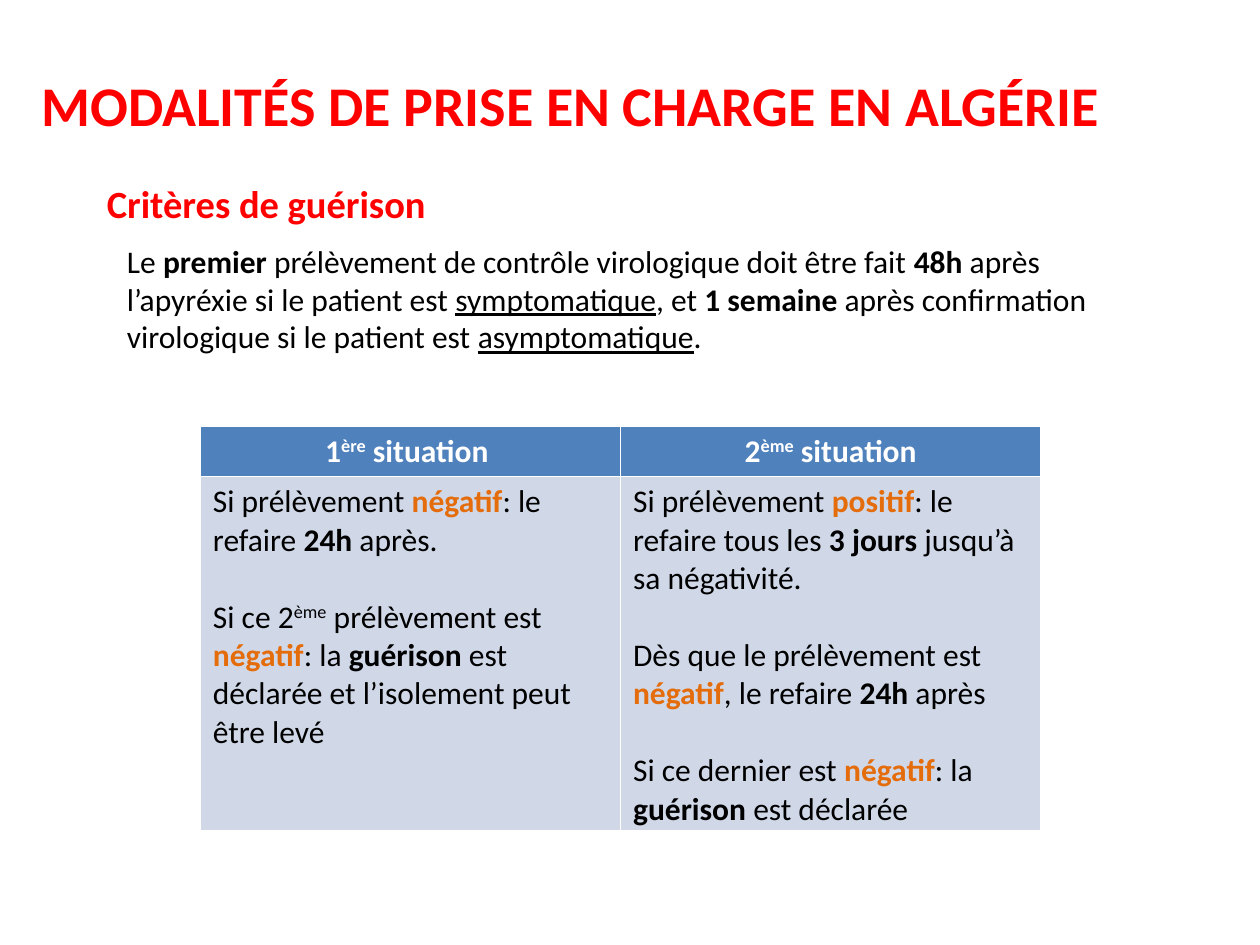
import pptx
import pptx.dml.color
import pptx.enum.text
import pptx.util

Inches, Pt = pptx.util.Inches, pptx.util.Pt
ALIGN = pptx.enum.text.PP_ALIGN
ANCHOR = pptx.enum.text.MSO_ANCHOR

COLORS = {
    "red": "FF0000",
    "black": "000000",
    "white": "FFFFFF",
    "orange": "E46C0A",
    "header": "4F81BD",
    "body": "D0D8E8",
}
STYLES = {
    "plain": {},
    "bold": {"bold": True},
    "under": {"underline": True},
    "key": {"bold": True, "color": "orange"},
    "sup": {"baseline": "30000"},
}
LINE_GAP = 22

TITLE = "MODALITÉS DE PRISE EN CHARGE EN ALGÉRIE"
SUBTITLE = "Critères de guérison"
CRITERION = [
    "Le ", ("premier", "bold"),
    " prélèvement de contrôle virologique doit être fait ", ("48h", "bold"),
    " après l’apyréxie si le patient est ", ("symptomatique", "under"),
    ", et ", ("1 semaine ", "bold"),
    "après confirmation virologique si le patient est ",
    ("asymptomatique", "under"), ".",
]
SITUATIONS = [
    {
        "heading": ["1", ("ère", "sup"), " situation "],
        "steps": [
            ["Si prélèvement ", ("négatif", "key"), ": le refaire ",
             ("24h", "bold"), " après."],
            ["Si ce 2", ("ème", "sup"), " prélèvement est ",
             ("négatif", "key"), ": la ", ("guérison", "bold"),
             " est déclarée et l’isolement peut être levé"],
        ],
    },
    {
        "heading": ["2", ("ème", "sup"), " situation"],
        "steps": [
            ["Si prélèvement ", ("positif", "key"), ": le refaire tous les ",
             ("3 jours ", "bold"), "jusqu’à sa négativité."],
            ["Dès que le prélèvement est ", ("négatif", "key"),
             ", le refaire ", ("24h", "bold"), " après"],
            ["Si ce dernier est ", ("négatif", "key"), ": la ",
             ("guérison", "bold"), " est déclarée"],
        ],
    },
]


def rgb(name):
    return pptx.dml.color.RGBColor.from_string(COLORS[name])


def write_runs(paragraph, parts, **base):
    """Add plain strings and (text, style) pairs as formatted runs."""
    for part in parts:
        text, style = (part, "plain") if isinstance(part, str) else part
        run = paragraph.add_run()
        run.text = text
        values = {"name": "Calibri", "size": Pt(18), "bold": False,
                  "color": "black", **base, **STYLES[style]}
        run.font.color.rgb = rgb(values.pop("color"))
        baseline = values.pop("baseline", None)
        if baseline:
            run._r.get_or_add_rPr().set("baseline", baseline)
        for attribute, value in values.items():
            setattr(run.font, attribute, value)


def add_title(slide, left, top, width, height):
    title = slide.shapes.title
    title.left, title.top, title.width, title.height = left, top, width, height
    title.text_frame.vertical_anchor = ANCHOR.MIDDLE
    paragraph = title.text_frame.paragraphs[0]
    paragraph.alignment = ALIGN.CENTER
    write_runs(paragraph, [TITLE], size=Pt(32), bold=True, color="red")


def add_text(slide, left, top, width, height, parts, **base):
    frame = slide.shapes.add_textbox(left, top, width, height).text_frame
    frame.word_wrap = True
    write_runs(frame.paragraphs[0], parts, **base)


def fill_cell(cell, paragraphs, fill, alignment, **base):
    cell.fill.solid()
    cell.fill.fore_color.rgb = rgb(fill)
    frame = cell.text_frame
    for index, parts in enumerate(paragraphs):
        paragraph = frame.add_paragraph() if index else frame.paragraphs[0]
        if index:
            paragraph.space_before = Pt(LINE_GAP)
        paragraph.alignment = alignment
        write_runs(paragraph, parts, **base)


def add_situations(slide, left, top, width, height):
    header_height = Inches(0.4)
    table = slide.shapes.add_table(
        2, len(SITUATIONS), left, top, width, height).table
    table.rows[0].height = header_height
    table.rows[1].height = height - header_height
    for column, situation in enumerate(SITUATIONS):
        fill_cell(table.cell(0, column), [situation["heading"]], "header",
                  ALIGN.CENTER, bold=True, color="white")
        fill_cell(table.cell(1, column), situation["steps"], "body",
                  ALIGN.LEFT)


def main():
    deck = pptx.Presentation()
    deck.slide_width, deck.slide_height = Inches(10), Inches(7.5)
    slide = deck.slides.add_slide(deck.slide_layouts.get_by_name("Title Only"))
    add_title(slide, Inches(0.03), Inches(0.44), Inches(9), Inches(0.77))
    add_text(slide, Inches(0.75), Inches(1.38), Inches(8.5), Inches(0.47),
             [SUBTITLE], size=Pt(22), bold=True, color="red")
    add_text(slide, Inches(0.91), Inches(1.87), Inches(8.03), Inches(1.01),
             CRITERION)
    add_situations(slide, Inches(1.59), Inches(3.38), Inches(6.67),
                   Inches(3.21))
    deck.save("out.pptx")


if __name__ == "__main__":
    main()
